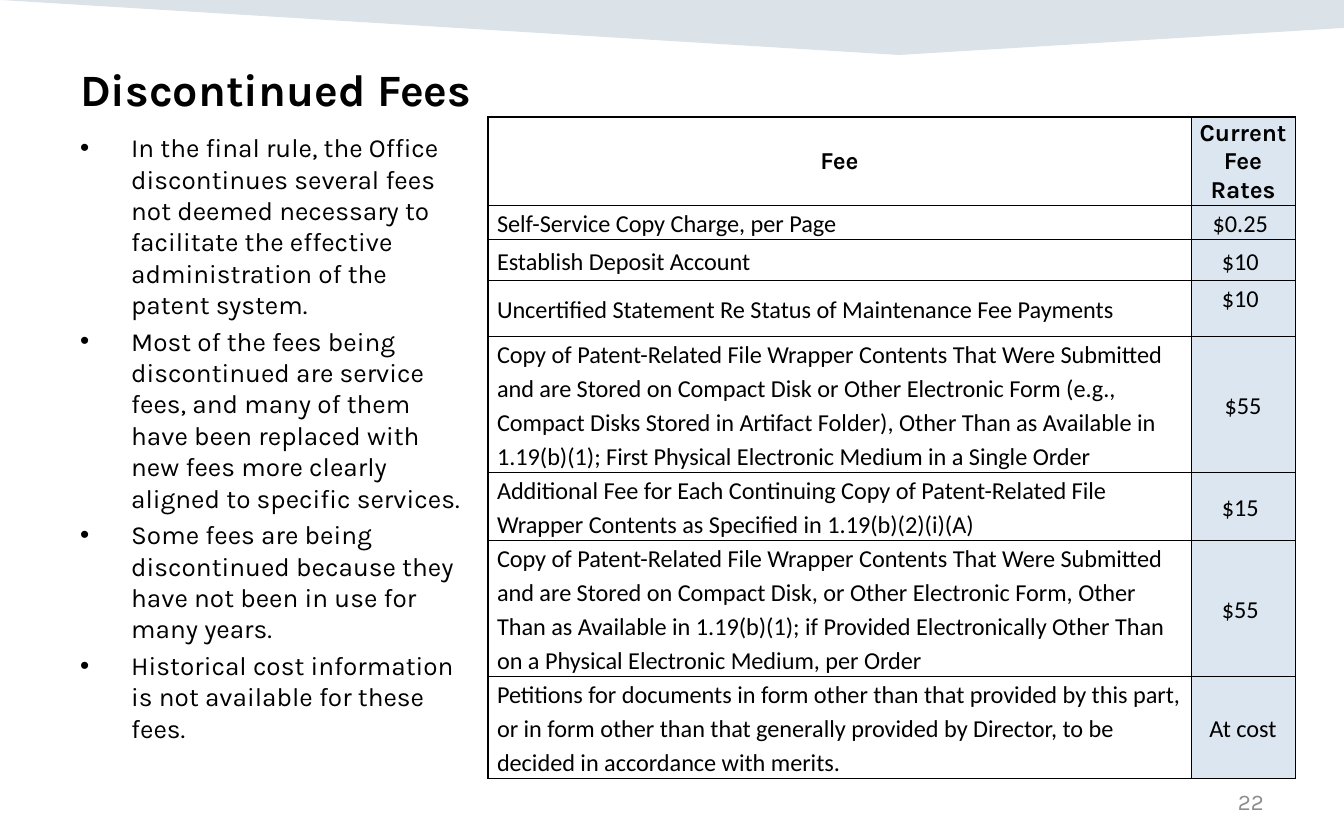
"""Build the slide on discontinued fees."""
from dataclasses import dataclass

from lxml.etree import SubElement
from pptx import Presentation
from pptx.dml.color import RGBColor
from pptx.enum.text import MSO_ANCHOR, PP_ALIGN
from pptx.oxml.ns import qn
from pptx.util import Emu, Pt


def px(size):
    """Turn px into EMU."""
    return Emu(round(size * 914400 / 134.4))


def put(item, form):
    """Set each attribute of a format dict."""
    for name, value in form.items():
        setattr(item, name, value)


@dataclass(frozen=True)
class Theme:
    """Colours, fonts and type sizes."""
    ink: str = "000000"
    paper: str = "FFFFFF"
    navy: str = "164469"
    pale: str = "DCE6F1"
    grey: str = "8C8C8C"
    head: str = "Karla"
    body: str = "Calibri"
    title: int = 24
    list: int = 14
    cell: int = 13
    page: int = 12


@dataclass
class Deck:
    """Hold the style and the current slide."""
    look: Theme
    slide: object

    def words(self, para, text, size, face, tone=None, bold=False, **form):
        """Fill a paragraph with styled text."""
        para.add_run().text = text
        put(para, form)
        for font in (para.font, para.runs[0].font):
            put(font, {"size": Pt(size), "name": face, "bold": bold})
            font.color.rgb = RGBColor.from_string(tone or self.look.ink)

    def box(self, area, anchor=MSO_ANCHOR.TOP):
        """Add a wrapped text box and return its frame."""
        frame = self.slide.shapes.add_textbox(*map(px, area)).text_frame
        put(frame, {"word_wrap": True, "vertical_anchor": anchor})
        return frame

    def label(self, area, text, size, anchor=MSO_ANCHOR.TOP, **form):
        """Add one line of text."""
        frame = self.box(area, anchor)
        self.words(frame.paragraphs[0], text, size, self.look.head, **form)

    def list(self, area, items):
        """Add a bullet list with hanging indents."""
        frame = self.box(area)
        for rank, text in enumerate(items):
            para = frame.add_paragraph() if rank else frame.paragraphs[0]
            props = para._p.get_or_add_pPr()
            props.set("marL", str(px(51)))
            props.set("indent", str(px(-51)))
            SubElement(props, qn("a:buFont"), typeface="Arial")
            SubElement(props, qn("a:buChar"), char="•")
            gap = {"space_before": Pt(2.8)} if rank else {}
            self.words(para, text, self.look.list, self.look.head, **gap)

    def band(self, first, rest, alpha):
        """Add a see-through outline without a line."""
        pen = self.slide.shapes.build_freeform(*first, scale=px(1))
        pen.add_line_segments(rest, close=True)
        shape = pen.convert_to_shape()
        shape.shadow.inherit = False
        shape.line.fill.background()
        shape.fill.solid()
        shape.fill.fore_color.rgb = RGBColor.from_string(self.look.navy)
        tone = shape._element.spPr.find(".//" + qn("a:srgbClr"))
        SubElement(tone, qn("a:alpha"), val=str(alpha * 1000))

    def edge(self, cell, widths):
        """Draw the four borders of a cell."""
        props = cell._tc.get_or_add_tcPr()
        for rank, (side, width) in enumerate(widths.items()):
            line = props.makeelement(qn("a:ln" + side), {"w": str(Pt(width))})
            fill = SubElement(line, qn("a:solidFill"))
            SubElement(fill, qn("a:srgbClr"), val=self.look.ink)
            props.insert(rank, line)

    def table(self, spot, cols, rows, data):
        """Add the fee table with a plain head row."""
        look = self.look
        area = (*spot, sum(cols), sum(rows))
        grid = self.slide.shapes.add_table(
            len(rows), len(cols), *map(px, area)).table
        put(grid, {"first_row": False, "horz_banding": False})
        for part, sizes, name in ((grid.columns, cols, "width"),
                                  (grid.rows, rows, "height")):
            for item, size in zip(part, sizes):
                setattr(item, name, px(size))
        for r, row in enumerate(data):
            head = r == 0
            side = px(1 if head else 9)
            for c, text in enumerate(row):
                cell = grid.cell(r, c)
                high = (r, c) == (3, 1)
                put(cell, {
                    "margin_left": side, "margin_right": side,
                    "margin_top": px(1 if head else 0), "margin_bottom": 0,
                    "vertical_anchor":
                        MSO_ANCHOR.TOP if high else MSO_ANCHOR.MIDDLE})
                cell.fill.solid()
                cell.fill.fore_color.rgb = RGBColor.from_string(
                    look.pale if c else look.paper)
                self.edge(cell, {"L": 0.5 if c else 1, "R": 0.5,
                                 "T": 1 if head else 0.5, "B": 0.5})
                self.words(
                    cell.text_frame.paragraphs[0], text, look.cell,
                    look.head if head else look.body, bold=head,
                    alignment=PP_ALIGN.CENTER if head or c else PP_ALIGN.LEFT,
                    line_spacing=1.0 if head else 1.15)


POINTS = [
    "In the final rule, the Office discontinues several fees not deemed "
    "necessary to facilitate the effective administration of the patent "
    "system.",
    "Most of the fees being discontinued are service fees, and many of them "
    "have been replaced with new fees more clearly aligned to specific "
    "services.",
    "Some fees are being discontinued because they have not been in use for "
    "many years.",
    "Historical cost information is not available for these fees.",
]
FEES = [
    ("Fee", "Current Fee Rates"),
    ("Self-Service Copy Charge, per Page", "$0.25 "),
    ("Establish Deposit Account", "$10 "),
    ("Uncertified Statement Re Status of Maintenance Fee Payments", "$10 "),
    ("Copy of Patent-Related File Wrapper Contents That Were Submitted and "
     "are Stored on Compact Disk or Other Electronic Form (e.g., Compact "
     "Disks Stored in Artifact Folder), Other Than as Available in "
     "1.19(b)(1); First Physical Electronic Medium in a Single Order", "$55"),
    ("Additional Fee for Each Continuing Copy of Patent-Related File Wrapper "
     "Contents as Specified in 1.19(b)(2)(i)(A)", "$15 "),
    ("Copy of Patent-Related File Wrapper Contents That Were Submitted and "
     "are Stored on Compact Disk, or Other Electronic Form, Other Than as "
     "Available in 1.19(b)(1); if Provided Electronically Other Than on a "
     "Physical Electronic Medium, per Order", "$55 "),
    ("Petitions for documents in form other than that provided by this part, "
     "or in form other than that generally provided by Director, to be "
     "decided in accordance with merits.", "At cost"),
]


def main():
    """Build and save the deck."""
    show = Presentation()
    put(show, {"slide_width": px(1344), "slide_height": px(840)})
    look = Theme()
    deck = Deck(look, show.slides.add_slide(show.slide_layouts[6]))
    deck.band((0, 0), [(1344, 0), (1344, 28), (899, 55)], 15)
    deck.label((67, 55, 1227, 60), "Discontinued Fees", look.title, bold=True)
    deck.label((964, 780, 313, 44), "22", look.page, MSO_ANCHOR.MIDDLE,
               tone=look.grey, alignment=PP_ALIGN.RIGHT)
    deck.list((67, 125, 407, 675), POINTS)
    deck.table((488, 117), (703, 104),
               (86, 34, 41, 56, 136, 68, 136, 102), FEES)
    show.save("out.pptx")


if __name__ == "__main__":
    main()
